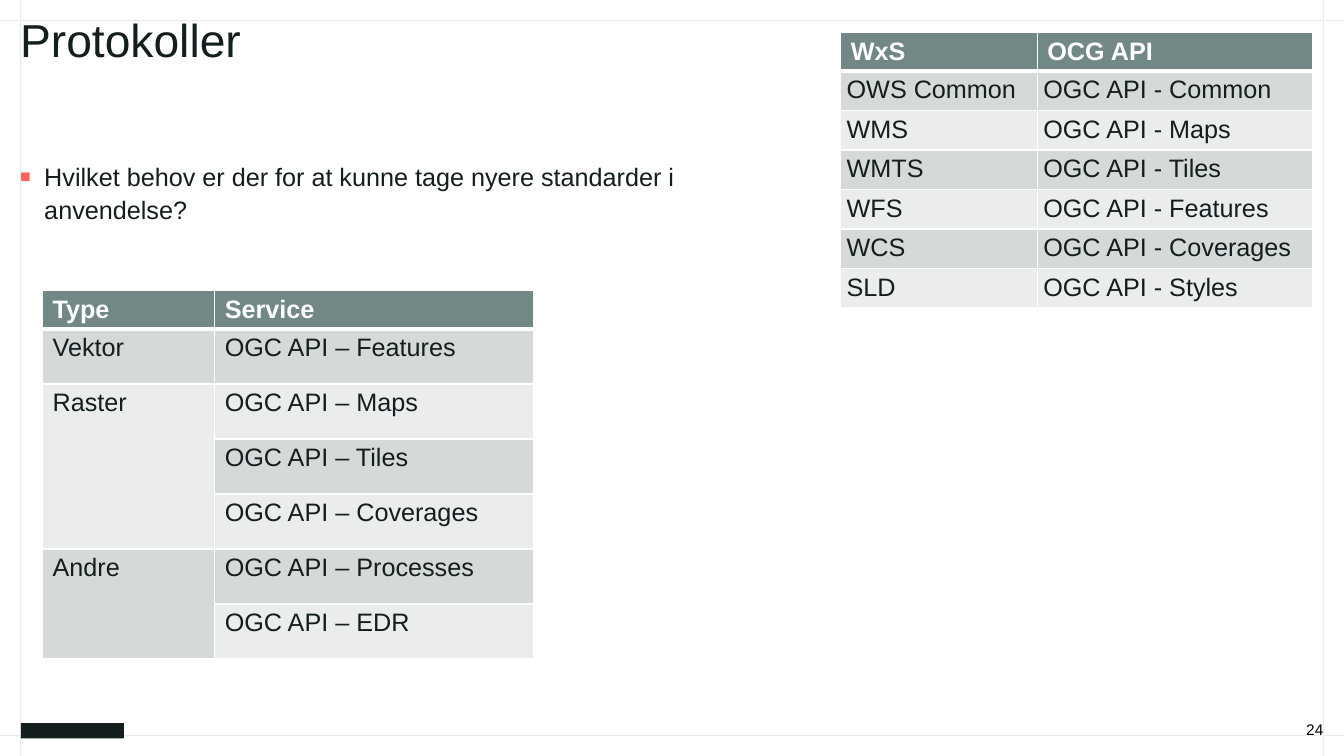
from lxml.etree import SubElement
from pptx import Presentation
from pptx.dml.color import RGBColor
from pptx.enum.shapes import MSO_SHAPE as Shape
from pptx.enum.text import MSO_ANCHOR as Anchor, PP_ALIGN as Align
from pptx.oxml import parse_xml
from pptx.oxml.ns import nsdecls, qn
from pptx.util import Pt

INK = RGBColor(0x14, 0x1E, 0x1E)
BLACK = RGBColor(0, 0, 0)
WHITE = RGBColor(0xFF, 0xFF, 0xFF)
GUIDE = RGBColor(0xE7, 0xEB, 0xEB)
HEADER = RGBColor(0x71, 0x88, 0x86)
BAND_DARK = RGBColor(0xD5, 0xDA, 0xD9)
BAND_LIGHT = RGBColor(0xEB, 0xED, 0xED)
CORAL = RGBColor(0xFF, 0x63, 0x59)

WIDTH, HEIGHT = 960, 540
MARGIN = 14.4
GUIDE_WIDTH = 0.72
HEADER_HEIGHT = 26.6

SERVICES = [
    ("Type", "Service"),
    ("Vektor", "OGC API – Features"),
    ("Raster", "OGC API – Maps"),
    ("", "OGC API – Tiles"),
    ("", "OGC API – Coverages"),
    ("Andre", "OGC API – Processes"),
    ("", "OGC API – EDR"),
]
SUCCESSORS = [
    ("WxS", "OCG API"),
    ("OWS Common", "OGC API - Common"),
    ("WMS", "OGC API - Maps"),
    ("WMTS", "OGC API - Tiles"),
    ("WFS", "OGC API - Features"),
    ("WCS", "OGC API - Coverages"),
    ("SLD", "OGC API - Styles"),
]


class SlideBuilder:
    font = "Arial"

    def __init__(self, page):
        self.page = page

    def span(self, para, text, size, color, bold=False):
        span = para.add_run()
        span.text = text
        span.font.name = self.font
        span.font.size = Pt(size)
        span.font.bold = bold
        span.font.color.rgb = color

    def paint(self, shape, color):
        shape.shadow.inherit = False
        shape.fill.solid()
        shape.fill.fore_color.rgb = color
        shape.line.fill.background()

    def guides(self, strips):
        outline = None
        for left, top, width, height in strips:
            right, bottom = left + width, top + height
            start, *others = [
                (Pt(x), Pt(y)) for x, y in
                ((left, top), (right, top), (right, bottom), (left, bottom))]
            if outline is None:
                outline = self.page.shapes.build_freeform(*start)
            else:
                outline.move_to(*start)
            outline.add_line_segments(others, close=True)
        self.paint(outline.convert_to_shape(), GUIDE)

    def block(self, left, top, width, height, color):
        shape = self.page.shapes.add_shape(
            Shape.RECTANGLE, Pt(left), Pt(top), Pt(width), Pt(height))
        self.paint(shape, color)

    def text(self, left, top, width, height, lines, size, color=INK,
             align=Align.LEFT, anchor=Anchor.TOP, spacing=1.0):
        box = self.page.shapes.add_textbox(Pt(left), Pt(top), Pt(width), Pt(height))
        frame = box.text_frame
        frame.word_wrap = True
        frame.vertical_anchor = anchor
        frame.margin_left = frame.margin_right = Pt(0)
        frame.margin_top = frame.margin_bottom = Pt(0)
        para = frame.paragraphs[0]
        para.alignment = align
        para.line_spacing = spacing
        for index, line in enumerate(lines):
            if index:
                para.add_line_break()
            self.span(para, line, size, color)
        return para

    def bullet(self, para, indent, color):
        para.space_after = Pt(6)
        props = para._p.get_or_add_pPr()
        props.set("marL", str(Pt(indent)))
        props.set("indent", str(-Pt(indent)))
        bullet_color = SubElement(props, qn("a:buClr"))
        SubElement(bullet_color, qn("a:srgbClr"), val=str(color))
        SubElement(props, qn("a:buSzPct"), val="70000")
        SubElement(props, qn("a:buFont"), typeface=self.font)
        SubElement(props, qn("a:buChar"), char="■")

    def borders(self, cell, bottom):
        props = cell._tc.get_or_add_tcPr()
        widths = {"lnL": 1, "lnR": 1, "lnT": 1, "lnB": bottom}
        for index, (side, width) in enumerate(widths.items()):
            props.insert(index, parse_xml(
                f'<a:{side} {nsdecls("a")} w="{Pt(width)}"><a:solidFill>'
                f'<a:srgbClr val="{WHITE}"/></a:solidFill></a:{side}>'))

    def table(self, left, top, columns, row_height, rows, inset=7.2, merges=()):
        height = HEADER_HEIGHT + row_height * (len(rows) - 1)
        table = self.page.shapes.add_table(
            len(rows), len(columns), Pt(left), Pt(top),
            Pt(sum(columns)), Pt(height)).table
        for column, width in zip(table.columns, columns):
            column.width = Pt(width)
        for r, values in enumerate(rows):
            is_header = r == 0
            table.rows[r].height = Pt(HEADER_HEIGHT if is_header else row_height)
            band = HEADER if is_header else BAND_DARK if r % 2 else BAND_LIGHT
            for c, value in enumerate(values):
                cell = table.cell(r, c)
                cell.fill.solid()
                cell.fill.fore_color.rgb = band
                cell.margin_left = cell.margin_right = Pt(7.2 if is_header else inset)
                cell.margin_top = Pt(3.6)
                cell.margin_bottom = Pt(2.3 if is_header else 3)
                self.borders(cell, 3 if is_header else 1)
                if value:
                    self.span(cell.text_frame.paragraphs[0], value, 18,
                              WHITE if is_header else INK, is_header)
        for first, last in merges:
            table.cell(first, 0).merge(table.cell(last, 0))


def main():
    deck = Presentation()
    deck.slide_width, deck.slide_height = Pt(WIDTH), Pt(HEIGHT)
    builder = SlideBuilder(deck.slides.add_slide(deck.slide_layouts[6]))

    columns = [(x, 0, GUIDE_WIDTH, HEIGHT)
               for x in (MARGIN, WIDTH - MARGIN - GUIDE_WIDTH)]
    rows = [(0, y, WIDTH, GUIDE_WIDTH)
            for y in (MARGIN, HEIGHT - MARGIN - GUIDE_WIDTH)]
    builder.guides(columns + rows)
    builder.block(15, 516.5, 73.5, 11, INK)

    content_width = WIDTH - 2 * MARGIN
    builder.text(MARGIN, 15, content_width, 75, ["Protokoller"], 33, spacing=0.83)
    question = builder.text(
        MARGIN, 113.2, content_width, 359,
        ["Hvilket behov er der for at kunne tage nyere standarder i", "anvendelse?"],
        18, spacing=1.1)
    builder.bullet(question, 17.2, CORAL)
    builder.text(731.5, 512.4, 213.75, 15, ["24"], 11, BLACK, Align.RIGHT, Anchor.BOTTOM)

    builder.table(30.4, 207.5, (123, 227.5), 39.3, SERVICES, merges=((2, 4), (5, 6)))
    builder.table(600.5, 23.2, (140.5, 196.4), 28.1, SUCCESSORS, inset=4.3)
    deck.save("out.pptx")


if __name__ == "__main__":
    main()
